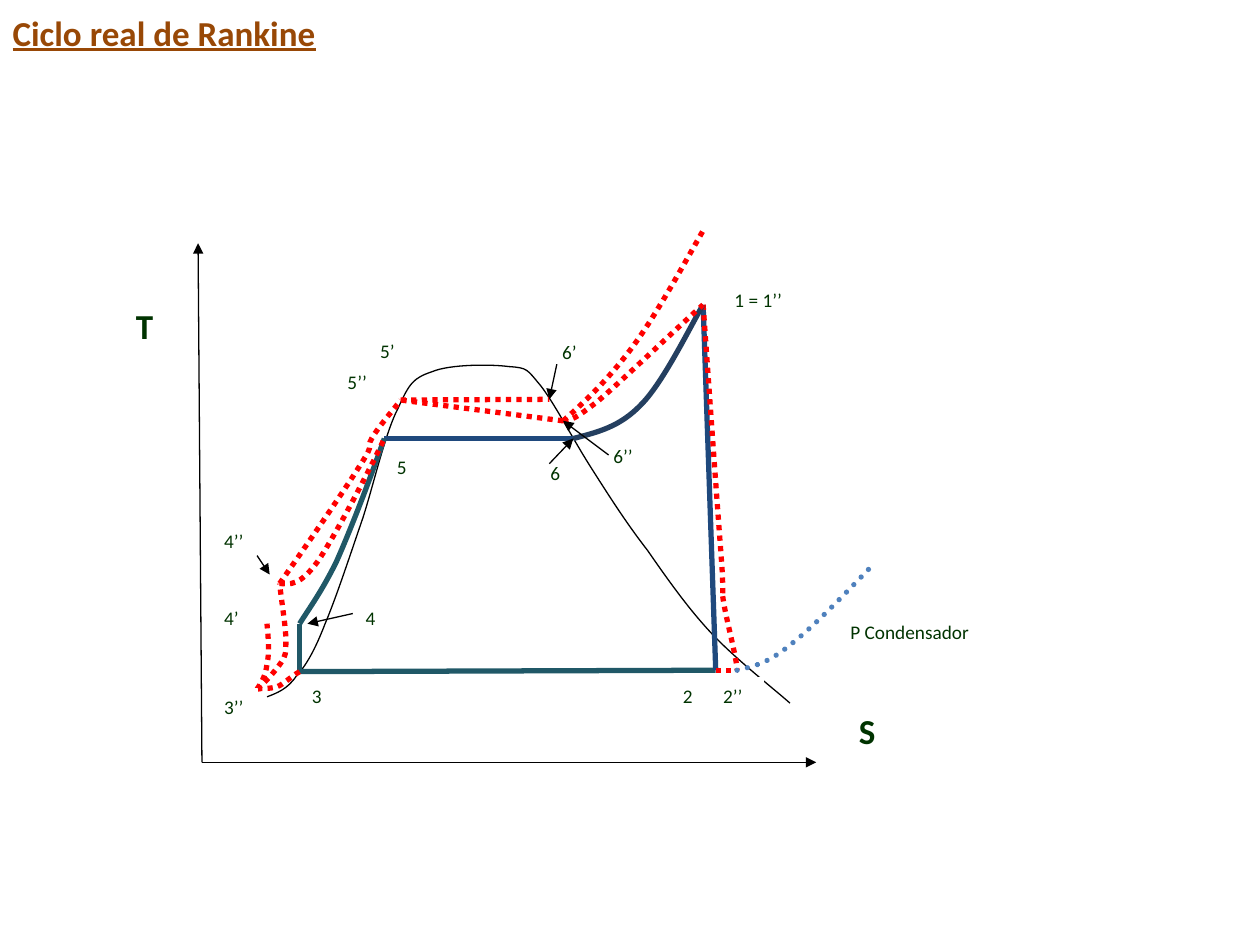
"""Build a slide with the T-S diagram of the real Rankine cycle."""
from lxml import etree
from pptx import Presentation
from pptx import util as u
from pptx.dml.color import RGBColor
from pptx.enum import dml, shapes, text
from pptx.oxml.ns import qn

Pt = u.Pt
COLORS = {
    "title": "984806", "label": "003300", "axis": "000000", "box": "FFFFFF",
    "water": "205867", "steam": "1F497D", "superheat": "243F60",
    "real": "FF0000", "condenser": "4F81BD",
}
STATES = {
    "1": (401.8, 174.2), "2": (409, 383), "2r": (421.2, 383),
    "3": (171.2, 383.8), "3r": (146.9, 393.8),
    "4": (171.2, 356.4), "4r": (159.8, 333.4),
    "5": (219.6, 250.6), "5r": (229, 228.6),
    "6": (327.6, 250.6), "6i": (313.9, 228.2), "6r": (321.8, 240.5),
}
ORIGIN = (115.4, 435.6)
AXIS_ENDS = [(113.2, 139), (466.4, 435.6)]
DOME = [
    (152.6, 398.2), (158.4, 396), (164.2, 393.8), (169.2, 386.6),
    (175, 380.2), (180, 371.5), (185.8, 356.4),
    (192.2, 341.3), (200.2, 316.8), (207.4, 295.9),
    (213.8, 275.8), (220.3, 247), (227.5, 233.3),
    (234, 218.9), (236.2, 216), (247, 212.4),
    (257, 208.1), (280.8, 208.1), (290.9, 209.5),
    (301.7, 210.2), (301, 211), (308.9, 220.3),
    (316.8, 230.4), (327.6, 251.3), (337.7, 267.1),
    (347.8, 283), (357.8, 298.8), (370.1, 314.6),
    (381.6, 331.2), (393.8, 348.5), (407.5, 362.9),
    (421.2, 377.3), (444.2, 395.3), (451.4, 401.8),
]
LINES = [
    ("2", "3", "water"), ("2", "1", "steam"), ("2", "2r", "real"),
    ("6", "5", "steam"), ("3", "4", "water"),
    ("5r", "6i", "real"), ("6r", "5r", "real"),
]
CURVES = [
    ("real", [STATES["1"], (406.1, 234.7), (410.4, 295.9), (412.6, 324),
              (414, 352.1), (411.8, 332.6), (413.3, 342.7),
              (414.7, 352.8), (421.2, 376.6), STATES["2r"]]),
    ("superheat", [STATES["6"], (341.3, 247), (354.2, 244.1), (366.5, 231.1),
                   (379.4, 218.2), (396, 183.6), STATES["1"]]),
    ("water", [STATES["4"], (177.1, 347), (183.6, 338.4), (192.2, 321.1),
               (200.2, 303.1), (210.2, 277.2), STATES["5"]]),
    ("real", [STATES["6r"], (325.4, 240.5), (328.3, 239.8), (342, 229),
              (355.7, 217.4), (391.7, 182.9), STATES["1"]]),
    ("real", [STATES["3"], (166.3, 386.6), (162, 391), (158.4, 392.4),
              (154.1, 393.8), (149, 393.1), STATES["3r"]]),
    ("real", [STATES["3r"], (149.8, 389.5), (151.9, 385.9), (152.6, 379.4),
              (154.1, 373), (153.4, 365), (152.6, 356.4)]),
    ("real", [STATES["3r"], (152.6, 388.8), (157.7, 383), (160.6, 378.7),
              (163.4, 374.4), (163.4, 373.7), (163.4, 365.8),
              (163.4, 358.6), (161.3, 346.3), STATES["4r"]]),
    ("real", [STATES["4r"], (165.6, 334.1), (171.4, 334.8), (181.4, 321.1),
              (191.5, 306.7), (214.6, 262.1), STATES["5"]]),
    ("real", [STATES["4r"], (178.6, 306.7), (197.3, 279.4), (205.9, 265.7),
              (215.3, 251.3), (208.8, 257), (212.4, 250.6),
              (216, 244.1), (226.8, 231.8), STATES["5r"]]),
    ("condenser", [STATES["2r"], (429.8, 380.9), (438.5, 379.4),
                   (451.4, 368.6), (464.4, 358.6), (481.7, 340.6),
                   (499.7, 321.8)]),
    ("real", [STATES["6r"], (334.1, 229.7), (346.3, 218.2), (360, 200.2),
              (373.7, 182.2), (387.4, 157), (401.8, 131.8)]),
]
LABELS = [
    ("P Condensador", 478.8, 350.8, 87.1, 20.2),
    ("3", 171.2, 387.4, 31, 20.2), ("3’’", 121, 393.8, 26, 22.3),
    ("4’", 121, 342.7, 26, 21.6), ("4", 201.8, 342.7, 27.4, 21.6),
    ("4’’", 121, 298.6, 33.1, 30.2), ("5", 219.8, 256.5, 23.8, 23),
    ("5’’", 191.5, 208.1, 28.8, 20.9), ("5’", 210.2, 190.6, 26, 17.3),
    ("6", 307.4, 260, 20.2, 23), ("6’’", 343.4, 250.6, 33.8, 23.8),
    ("6’", 314.1, 190.6, 24.5, 26), ("1 = 1’’", 412.6, 161.3, 54, 29.5),
]
POINTERS = [
    ((146.9, 317.5), (154.1, 328.3)), ((201.6, 350.6), (175.7, 356.4)),
    ((347.8, 260), STATES["6r"]), ((313.9, 265), STATES["6"]),
    ((318.2, 208.1), STATES["6i"]),
]


def rgb(name):
    return RGBColor.from_string(COLORS[name])


def style_line(line, color, width):
    """Apply colour and width, with dots for real and condenser paths."""
    line.color.rgb = rgb(color)
    line.width = Pt(width)
    if color in ("real", "condenser"):
        line.dash_style = dml.MSO_LINE.ROUND_DOT


def add_line(s, start, end, color, width=3, arrow=False):
    """Draw a straight line, optionally ending in an arrowhead."""
    ends = [Pt(v) for v in (*start, *end)]
    c = s.shapes.add_connector(shapes.MSO_CONNECTOR.STRAIGHT, *ends)
    style_line(c.line, color, width)
    sp_pr = c._element.spPr
    if arrow:
        etree.SubElement(sp_pr.find(qn("a:ln")), qn("a:tailEnd"), type="triangle")
    etree.SubElement(sp_pr, qn("a:effectLst"))


def bend_segments(sp):
    """Merge every three straight segments of a freeform into a cubic one."""
    outline = next(sp._element.iter(qn("a:path")))
    segments = outline.findall(qn("a:lnTo"))
    for i in range(0, len(segments), 3):
        cubic = etree.SubElement(outline, qn("a:cubicBezTo"))
        for segment in segments[i:i + 3]:
            cubic.append(segment[0])
            outline.remove(segment)


def add_curve(s, nodes, color, width=3):
    """Draw an open smooth curve through cubic nodes."""
    start, *rest = [(Pt(x), Pt(y)) for x, y in nodes]
    builder = s.shapes.build_freeform(*start)
    builder.add_line_segments(rest, close=False)
    sp = builder.convert_to_shape()
    bend_segments(sp)
    sp.shadow.inherit = False
    sp.fill.background()
    style_line(sp.line, color, width)
    if color == "condenser":
        sp._element.spPr.find(qn("a:ln")).set("cap", "rnd")


def format_text(p, size, color, bold=False, underline=False):
    """Align a paragraph left and format its runs."""
    p.alignment = text.PP_ALIGN.LEFT
    for r in p.runs:
        r.font.name = "Calibri"
        r.font.size = Pt(size)
        r.font.bold = bold
        r.font.underline = underline
        r.font.color.rgb = rgb(color)


def add_label(s, words, left, top, width, height, size=11, bold=False):
    """Add a white box with a left-aligned label and return it."""
    sp = s.shapes.add_shape(shapes.MSO_SHAPE.RECTANGLE,
                            *[Pt(v) for v in (left, top, width, height)])
    sp.shadow.inherit = False
    sp.fill.solid()
    sp.fill.fore_color.rgb = rgb("box")
    style_line(sp.line, "box", 0.75)
    tf = sp.text_frame
    tf.word_wrap = True
    tf.vertical_anchor = text.MSO_ANCHOR.TOP
    tf.text = words
    p = tf.paragraphs[0]
    p.space_after = Pt(10)
    format_text(p, size, "label", bold)
    return sp


def add_outlet_label(s):
    """Label both turbine outlets in one box with a tab stop."""
    tf = add_label(s, "2\t2’’", 370.8, 387.4, 65.5, 20.2).text_frame
    tf.margin_left = Pt(19.4)
    tabs = etree.SubElement(tf.paragraphs[0]._p.get_or_add_pPr(), qn("a:tabLst"))
    etree.SubElement(tabs, qn("a:tab"), pos=str(Pt(23)), algn="l")


def add_title(s, words):
    """Place and format the title placeholder."""
    sp = s.shapes.title
    sp.left, sp.top, sp.width, sp.height = Pt(0), Pt(0), Pt(720), Pt(36.6)
    tf = sp.text_frame
    tf.text = words
    tf.auto_size = text.MSO_AUTO_SIZE.NONE
    tf.vertical_anchor = text.MSO_ANCHOR.MIDDLE
    format_text(tf.paragraphs[0], 20, "title", bold=True, underline=True)


def main():
    prs = Presentation()
    prs.slide_width, prs.slide_height = Pt(720), Pt(540)
    s = prs.slides.add_slide(prs.slide_layouts[5])
    add_title(s, "Ciclo real de Rankine")
    for end in AXIS_ENDS:
        add_line(s, ORIGIN, end, "axis", 0.75, arrow=True)
    add_curve(s, DOME, "axis", 0.75)
    for start, end, color in LINES:
        add_line(s, STATES[start], STATES[end], color)
    for color, nodes in CURVES:
        add_curve(s, nodes, color)
    add_label(s, "T", 70.6, 170.6, 33.8, 37.4, 20, True)
    add_label(s, "S", 483.8, 401.8, 28.8, 33.8, 20, True)
    add_outlet_label(s)
    for label in LABELS:
        add_label(s, *label)
    for start, end in POINTERS:
        add_line(s, start, end, "axis", 0.75, arrow=True)
    prs.save("out.pptx")


if __name__ == "__main__":
    main()
